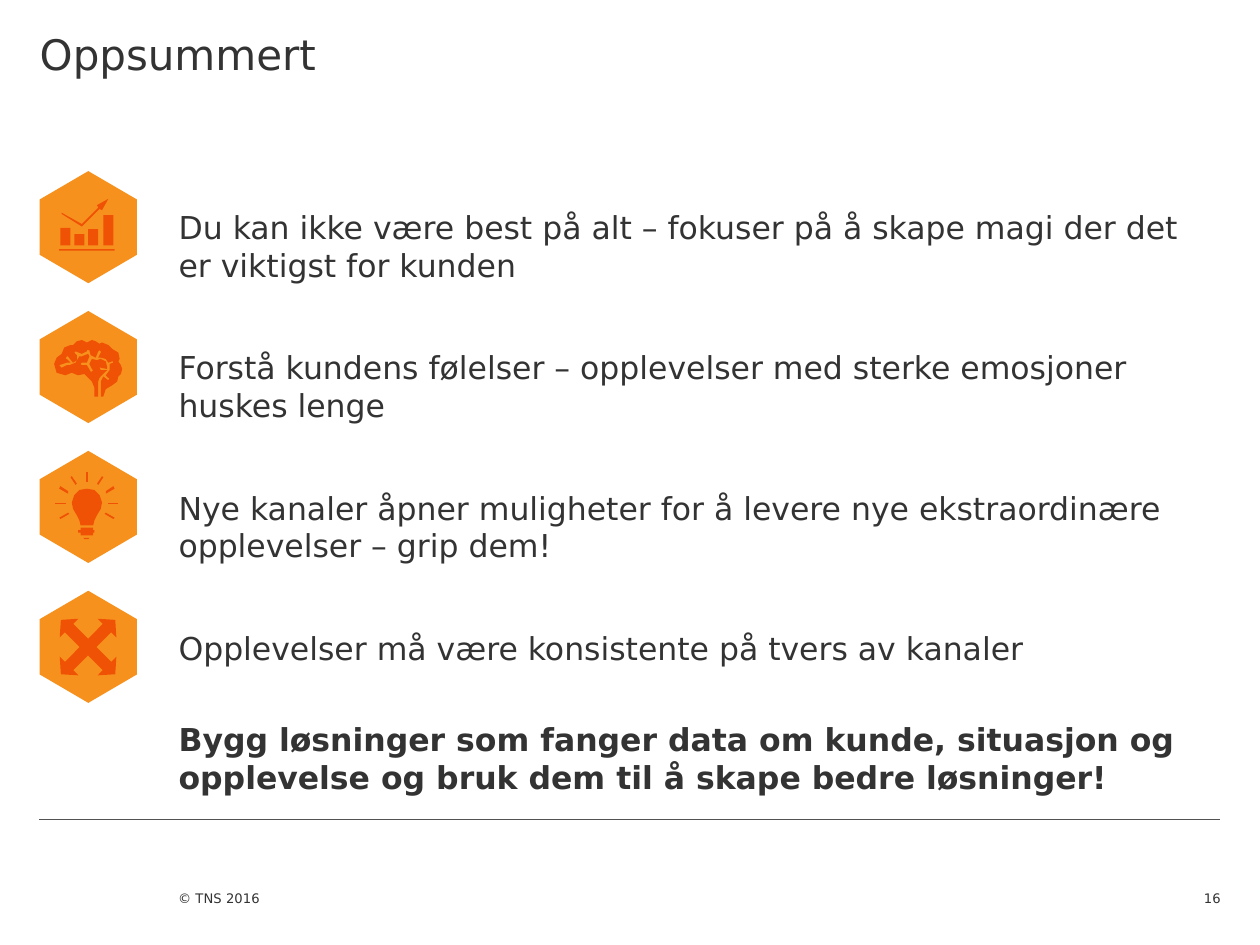
from lxml import etree
from pptx import Presentation
from pptx.dml.color import RGBColor
from pptx.enum.shapes import MSO_CONNECTOR, MSO_SHAPE
from pptx.enum.text import MSO_ANCHOR, MSO_AUTO_SIZE, PP_ALIGN
from pptx.oxml.ns import qn
from pptx.util import Cm, Pt

HEXAGON, QUAD_ARROW = MSO_SHAPE.HEXAGON, MSO_SHAPE.QUAD_ARROW
STRAIGHT = MSO_CONNECTOR.STRAIGHT
TOP, BOTTOM = MSO_ANCHOR.TOP, MSO_ANCHOR.BOTTOM
LEFT, RIGHT = PP_ALIGN.LEFT, PP_ALIGN.RIGHT
NO_AUTOFIT = MSO_AUTO_SIZE.NONE

# Content
TITLE = "Oppsummert"
POINTS = [
    "Du kan ikke være best på alt – fokuser på å skape magi der det er viktigst for kunden",
    "Forstå kundens følelser – opplevelser med sterke emosjoner huskes lenge",
    "Nye kanaler åpner muligheter for å levere nye ekstraordinære opplevelser – grip dem!",
    "Opplevelser må være konsistente på tvers av kanaler",
]
CONCLUSION = ("Bygg løsninger som fanger data om kunde, situasjon og opplevelse "
              "og bruk dem til å skape bedre løsninger!")
COPYRIGHT = "© TNS 2016"
PAGE_NUMBER = "16"

FONT = "DejaVu Sans"
COLORS = {"text": "333333", "hexagon": "F7911E", "icon": "EF5205", "rule": "525252"}

# Layout in centimetres
ROW_TOP, ROW_PITCH = 3.45, 2.82
TEXT_TOP, TEXT_PITCH = 4.19, 2.83
TEXT_LEFT, TEXT_WIDTH, TEXT_HEIGHT = 3.6, 20.96, 0.74
ICON_UNIT = Cm(2.54) / 100  # icon outlines: x from the slide edge, y from the row top


def box(left, top, right, bottom):
    return [(left, top), (right, top), (right, bottom), (left, bottom)]


def mirrored(outline, axis=69):
    return [(2 * axis - x, y) for x, y in outline]


# Icon outlines
BARS = [(48, 45), (59, 50), (70, 46), (82, 35)]
TREND_ARROW = [(79, 30), (81, 31), (86, 22), (77, 27), (78, 29),
               (65, 42), (49, 33), (49, 34), (65, 44)]
CHART_ICON = [box(x, y, x + 8, 59) for x, y in BARS] + [box(47, 62, 91, 63), TREND_ARROW]

BRAIN_ICON = [[
    (94, 40), (95, 38), (94, 33), (89, 30), (86, 27), (81, 25), (79, 26), (76, 24),
    (73, 23), (69, 25), (65, 23), (61, 24), (58, 27), (56, 27), (51, 29), (49, 34),
    (45, 37), (43, 42), (45, 49), (52, 51), (57, 49), (62, 51), (67, 50), (69, 52),
    (73, 56), (75, 61), (75, 68), (78, 68), (78, 56), (79, 53), (82, 50), (85, 47),
    (80, 47), (79, 45), (80, 45), (85, 46), (85, 44), (84, 40), (80, 38), (77, 39),
    (73, 38), (71, 42), (73, 46), (74, 47), (73, 48), (72, 48), (69, 43), (65, 43),
    (64, 42), (65, 41), (69, 41), (71, 36), (70, 34), (65, 36), (63, 36), (60, 41),
    (55, 43), (53, 43), (49, 45), (47, 43), (53, 41), (56, 41), (53, 38), (52, 38),
    (53, 36), (54, 36), (58, 41), (61, 39), (61, 35), (59, 33), (60, 32), (65, 34),
    (69, 32), (69, 31), (71, 31), (72, 35), (76, 37), (78, 32), (79, 31), (80, 32),
    (80, 33), (78, 37), (80, 37), (84, 38), (86, 41), (89, 40), (89, 39), (90, 41),
    (87, 42), (87, 47), (84, 51), (86, 53), (87, 53), (86, 55), (82, 52), (80, 56),
    (80, 68), (82, 68), (84, 62), (89, 59), (93, 56), (94, 52), (96, 50), (97, 46),
    (96, 43),
]]

BULB_HALF = [(69, 30), (63, 31), (59, 35), (57, 41), (58, 46), (61, 51), (63, 55), (64, 59)]
SOCKET = [(64, 61), (64, 63), (62, 63), (62, 65), (64, 65), (64, 67),
          (74, 67), (74, 65), (75, 65), (75, 63), (74, 63), (74, 61)]
SOCKET_CAP = [(66, 69), (71, 69), (70, 70), (67, 70)]
LEFT_RAYS = [
    [(47, 53), (48, 54), (55, 50), (54, 49)],
    box(44, 41, 52, 42.5),
    [(47.5, 28), (54, 32), (53.5, 33.5), (47, 30)],
    [(55.5, 21), (57, 20), (61, 26), (59.5, 27)],
]
BULB_PARTS = [BULB_HALF + mirrored(BULB_HALF)[::-1], SOCKET, SOCKET_CAP, box(68, 17, 70, 25)]
BULB_PARTS += LEFT_RAYS + [mirrored(ray) for ray in LEFT_RAYS]

# Each icon is a list of shapes, each shape a list of outlines
ICONS = [[CHART_ICON], [BRAIN_ICON], [[part] for part in BULB_PARTS]]


def color(name):
    return RGBColor.from_string(COLORS[name])


def paint(shape, color_name):
    shape.shadow.inherit = False
    shape.fill.solid()
    shape.fill.fore_color.rgb = color(color_name)
    shape.line.fill.background()


def add_preset(slide, kind, left, top, width, height, color_name, adjustments, rotation):
    shape = slide.shapes.add_shape(kind, Cm(left), Cm(top), Cm(width), Cm(height))
    for index, value in enumerate(adjustments):
        shape.adjustments[index] = value
    shape.rotation = rotation
    paint(shape, color_name)


def add_icon(slide, icon, top):
    shapes = slide.shapes if len(icon) == 1 else slide.shapes.add_group_shape().shapes
    for outlines in icon:
        builder = shapes.build_freeform(*outlines[0][0], scale=ICON_UNIT)
        for index, outline in enumerate(outlines):
            if index:
                builder.move_to(*outline[0])
            builder.add_line_segments(outline[1:], close=True)
        paint(builder.convert_to_shape(0, Cm(top)), "icon")


def write(shape, place, text, size, bold=False, alignment=LEFT, anchor=TOP,
          inset_top=0, inset_bottom=0):
    shape.left, shape.top, shape.width, shape.height = (Cm(value) for value in place)
    frame = shape.text_frame
    frame.word_wrap = True
    frame.auto_size = NO_AUTOFIT
    frame.vertical_anchor = anchor
    frame.margin_left = frame.margin_right = 0
    frame.margin_top, frame.margin_bottom = Cm(inset_top), Cm(inset_bottom)
    paragraph = frame.paragraphs[0]
    paragraph.alignment = alignment
    paragraph.space_before = Pt(0)
    if shape.is_placeholder:
        properties = paragraph._p.get_or_add_pPr()
        properties.set("marL", "0")
        properties.set("indent", "0")
        etree.SubElement(properties, qn("a:buNone"))
    run = paragraph.add_run()
    run.text = text
    run.font.name, run.font.size, run.font.bold = FONT, Pt(size), bold
    run.font.color.rgb = color("text")


def add_text(slide, place, text, size, **options):
    write(slide.shapes.add_textbox(0, 0, 0, 0), place, text, size, **options)


def main():
    presentation = Presentation()
    presentation.slide_width, presentation.slide_height = Cm(25.4), Cm(19.05)
    slide = presentation.slides.add_slide(presentation.slide_layouts[1])

    # Title
    write(slide.shapes.title, (0.8, 0, 23.8, 2.87), TITLE, 24, inset_top=0.58)

    # Rows: hexagon, icon and message
    for index, text in enumerate(POINTS):
        top = ROW_TOP + index * ROW_PITCH
        add_preset(slide, HEXAGON, 0.65, top + 0.15, 2.26, 1.96, "hexagon", (0.292, 1.155), 90)
        if index < len(ICONS):
            add_icon(slide, ICONS[index], top)
        else:
            add_preset(slide, QUAD_ARROW, 1, top + 0.36, 1.55, 1.55, "icon",
                       (0.153, 0.172, 0.151), 45)
        place = (TEXT_LEFT, TEXT_TOP + index * TEXT_PITCH, TEXT_WIDTH, TEXT_HEIGHT)
        if index == 0:
            write(slide.placeholders[1], place, text, 18)
        else:
            add_text(slide, place, text, 18)

    # Conclusion and rule
    add_text(slide, (TEXT_LEFT, 14.52, TEXT_WIDTH, TEXT_HEIGHT), CONCLUSION, 18, bold=True)
    rule = slide.shapes.add_connector(STRAIGHT, Cm(0.79), Cm(16.52), Cm(24.59), Cm(16.52))
    rule.line.color.rgb = color("rule")
    rule.line.width = Pt(0.75)
    etree.SubElement(rule._element.spPr, qn("a:effectLst"))

    # Footer
    add_text(slide, (3.59, 17.58, 7.06, 1.47), COPYRIGHT, 7.5, anchor=BOTTOM, inset_bottom=0.79)
    add_text(slide, (23.21, 17.56, 1.4, 0.71), PAGE_NUMBER, 7.5, alignment=RIGHT, anchor=BOTTOM)

    presentation.save("out.pptx")


if __name__ == "__main__":
    main()
